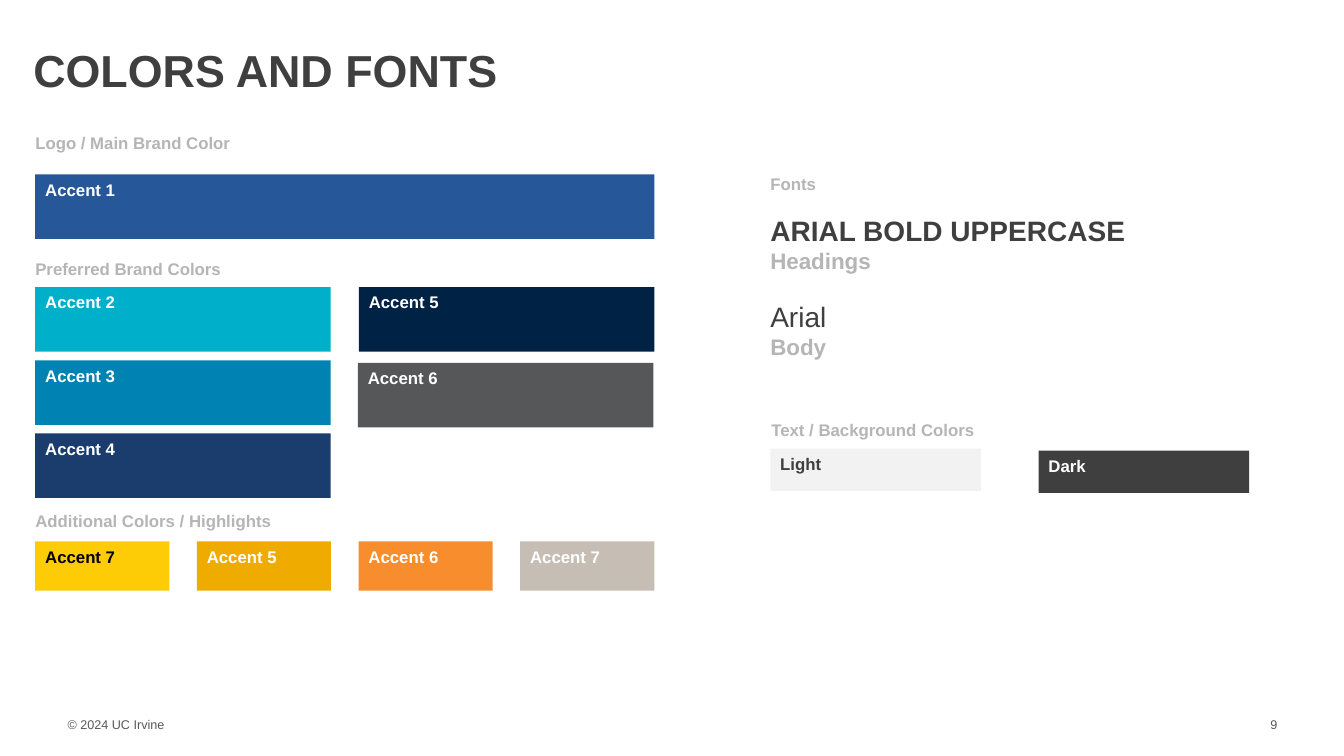
from pptx import Presentation
from pptx.dml.color import RGBColor
from pptx.enum import shapes, text
from pptx.util import Inches, Pt

WHITE = RGBColor(0xFF, 0xFF, 0xFF)
BLACK = RGBColor(0x00, 0x00, 0x00)
DARK = RGBColor(0x3F, 0x3F, 0x3F)
LIGHT = RGBColor(0xF2, 0xF2, 0xF2)
LABEL = RGBColor(0xB5, 0xB5, 0xB5)
FOOT = RGBColor(0x59, 0x59, 0x59)
BLUE = RGBColor(0x25, 0x57, 0x99)
CYAN = RGBColor(0x00, 0xB0, 0xCA)
TEAL = RGBColor(0x00, 0x83, 0xB3)
ROYAL = RGBColor(0x1B, 0x3D, 0x6D)
NAVY = RGBColor(0x00, 0x22, 0x44)
GRAY = RGBColor(0x55, 0x57, 0x59)
YELLOW = RGBColor(0xFE, 0xCC, 0x07)
GOLD = RGBColor(0xF0, 0xAB, 0x00)
ORANGE = RGBColor(0xF7, 0x8D, 0x2D)
SAND = RGBColor(0xC6, 0xBE, 0xB5)


def write(para, words, size=12, color=LABEL, bold=True,
          align=text.PP_ALIGN.LEFT, before=0):
    para.alignment = align
    para.space_before = Pt(before)
    run = para.add_run()
    run.text = words
    font = run.font
    font.name, font.size, font.bold = "Arial", Pt(size), bold
    font.color.rgb = color


def setup(frame, anchor=text.MSO_ANCHOR.MIDDLE):
    frame.margin_left = frame.margin_right = 0
    frame.margin_top = frame.margin_bottom = 0
    frame.word_wrap = True
    frame.auto_size = text.MSO_AUTO_SIZE.NONE
    frame.vertical_anchor = anchor


def label(slide, words, x, y, w=4.31, h=0.2, **style):
    box = slide.shapes.add_textbox(Inches(x), Inches(y), Inches(w), Inches(h))
    setup(box.text_frame)
    write(box.text_frame.paragraphs[0], words, **style)


def swatch(slide, name, fill, x, y, w, h, color=WHITE):
    rect = slide.shapes.add_shape(shapes.MSO_SHAPE.RECTANGLE, Inches(x),
                                  Inches(y), Inches(w), Inches(h))
    rect.shadow.inherit = False
    rect.fill.solid()
    rect.fill.fore_color.rgb = fill
    rect.line.fill.background()
    rect.text_frame.vertical_anchor = text.MSO_ANCHOR.TOP
    write(rect.text_frame.paragraphs[0], name, color=color)


def heading(slide, x, y, w, h):
    title = slide.shapes.title
    title.left, title.top = Inches(x), Inches(y)
    title.width, title.height = Inches(w), Inches(h)
    setup(title.text_frame)
    para = title.text_frame.paragraphs[0]
    para.line_spacing = 0.9
    write(para, "COLORS AND FONTS", size=32, color=DARK)


def palette(slide, x, y, w):
    # Main color
    label(slide, "Logo / Main Brand Color", x, y)
    swatch(slide, "Accent 1", BLUE, x, y + 0.41, w, 0.64)

    # Preferred colors in two columns
    label(slide, "Preferred Brand Colors", x, y + 1.25)
    half, top = 2.93, y + 1.53
    for row, (name, fill) in enumerate([
            ("Accent 2", CYAN), ("Accent 3", TEAL), ("Accent 4", ROYAL)]):
        swatch(slide, name, fill, x, top + row * 0.725, half, 0.64)
    right = x + w - half
    swatch(slide, "Accent 5", NAVY, right, top, half, 0.64)
    swatch(slide, "Accent 6", GRAY, right - 0.01, top + 0.75, half, 0.64)

    # Highlights in one row
    label(slide, "Additional Colors / Highlights", x, y + 3.75)
    small = 1.33
    step = (w - small) / 3
    for col, (name, fill, color) in enumerate([
            ("Accent 7", YELLOW, BLACK), ("Accent 5", GOLD, WHITE),
            ("Accent 6", ORANGE, WHITE), ("Accent 7", SAND, WHITE)]):
        swatch(slide, name, fill, x + col * step, y + 4.05, small, 0.49, color)


def fonts(slide, x, y, w):
    label(slide, "Fonts", x, y, w=1.45)
    box = slide.shapes.add_textbox(Inches(x), Inches(y + 0.4),
                                   Inches(w), Inches(1.45))
    frame = box.text_frame
    setup(frame, text.MSO_ANCHOR.TOP)
    write(frame.paragraphs[0], "ARIAL BOLD UPPERCASE", size=20, color=DARK)
    write(frame.add_paragraph(), "Headings", size=16)
    write(frame.add_paragraph(), "Arial", size=20, color=DARK, bold=False,
          before=18.4)
    write(frame.add_paragraph(), "Body", size=16)


def tones(slide, x, y):
    label(slide, "Text / Background Colors", x + 0.01, y)
    swatch(slide, "Light", LIGHT, x, y + 0.29, 2.09, 0.42, DARK)
    swatch(slide, "Dark", DARK, x + 2.66, y + 0.31, 2.09, 0.42)


def footer(slide, x, y, w, h):
    style = dict(size=9, color=FOOT, bold=False)
    label(slide, "© 2024 UC Irvine", x, y, 2.56, h, **style)
    label(slide, "9", x + w - 0.48, y, 0.48, h,
          align=text.PP_ALIGN.RIGHT, **style)


def main():
    deck = Presentation()
    deck.slide_width, deck.slide_height = Inches(13.33), Inches(7.5)
    slide = deck.slides.add_slide(deck.slide_layouts[5])
    footer(slide, 0.67, 6.88, 12, 0.62)
    heading(slide, 0.33, 0.29, 12.67, 0.87)
    palette(slide, 0.35, 1.32, 6.14)
    fonts(slide, 7.64, 1.72, 5.37)
    tones(slide, 7.64, 4.16)
    deck.save("out.pptx")


if __name__ == "__main__":
    main()
